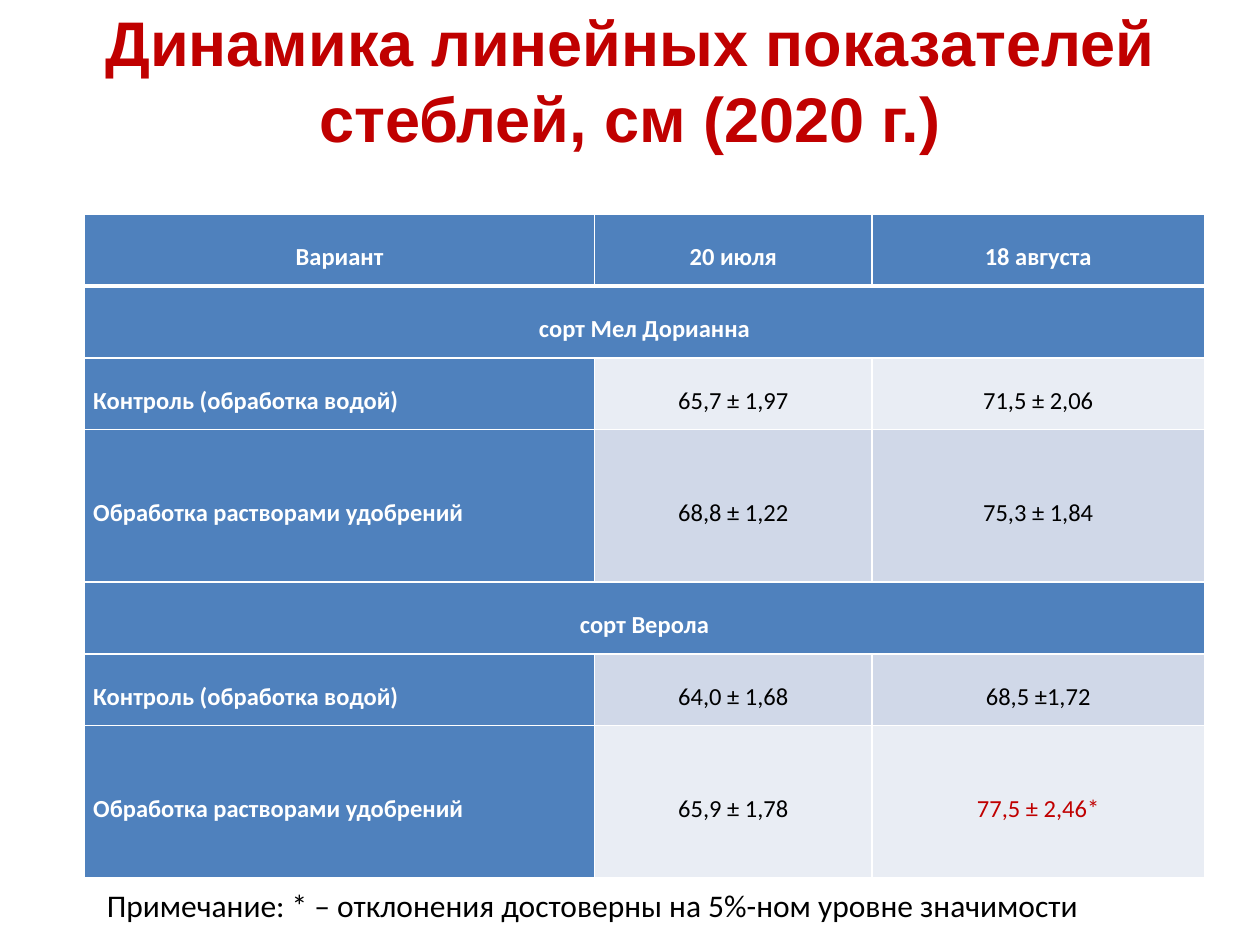
from lxml.etree import SubElement
from pptx import Presentation
from pptx.dml.color import RGBColor
from pptx.enum.text import MSO_ANCHOR, PP_ALIGN
from pptx.oxml.ns import qn
from pptx.util import Inches, Pt

COLORS = {"red": "C00000", "blue": "4F81BD", "light": "E9EDF4",
          "mid": "D0D8E8", "white": "FFFFFF", "black": "000000"}

TITLE = "Динамика линейных показателей стеблей, см (2020 г.)"
NOTE = "Примечание: * – отклонения достоверны на 5%-ном уровне значимости"
CONTROL = "Контроль (обработка водой)"
TREATED = "Обработка\N{NO-BREAK SPACE}растворами удобрений"
# A row with one text spans the whole table
ROWS = [
    ("Вариант", "20 июля", "18 августа"),
    ("сорт Мел Дорианна",),
    (CONTROL, "65,7 ± 1,97", "71,5 ± 2,06"),
    (TREATED, "68,8 ± 1,22", "75,3 ± 1,84"),
    ("сорт Верола",),
    (CONTROL, "64,0 ± 1,68", "68,5 ±1,72"),
    (TREATED, "65,9 ± 1,78", "77,5 ± 2,46*"),
]
BANDS = {2: "light", 3: "mid", 5: "mid", 6: "light"}
COL_WIDTHS = (4.05, 2.2, 2.64)
ROW_HEIGHT, TALL_ROW = 0.57, 1.21


def write(tf, text, size, color, font="Calibri", bold=False, align=PP_ALIGN.LEFT, spacing=None):
    p = tf.paragraphs[0]
    p.alignment = align
    if spacing:
        p.line_spacing = spacing
    r = p.add_run()
    r.text = text
    for name, value in {"size": Pt(size), "name": font, "bold": bold}.items():
        setattr(r.font, name, value)
    r.font.color.rgb = RGBColor.from_string(COLORS[color])


def set_borders(cell, bottom):
    tcPr = cell._tc.get_or_add_tcPr()
    widths = {"a:lnL": 1, "a:lnR": 1, "a:lnT": 1, "a:lnB": bottom}
    for i, (tag, width) in enumerate(widths.items()):
        ln = SubElement(tcPr, qn(tag), w=str(Pt(width)))
        fill = SubElement(ln, qn("a:solidFill"))
        SubElement(fill, qn("a:srgbClr"), val=COLORS["white"])
        tcPr.insert(i, ln)


def style_cell(cell, fill, bottom):
    cell.fill.solid()
    cell.fill.fore_color.rgb = RGBColor.from_string(COLORS[fill])
    cell.vertical_anchor = MSO_ANCHOR.MIDDLE
    margins = {"margin_left": 0.07, "margin_right": 0.07, "margin_top": 0, "margin_bottom": 0}
    for name, value in margins.items():
        setattr(cell, name, Inches(value))
    set_borders(cell, bottom)


def add_results_table(s):
    heights = [TALL_ROW if row[0] == TREATED else ROW_HEIGHT for row in ROWS]
    table = s.shapes.add_table(
        len(ROWS), len(COL_WIDTHS), Inches(0.67), Inches(1.7),
        Inches(sum(COL_WIDTHS)), Inches(sum(heights))).table
    for column, width in zip(table.columns, COL_WIDTHS):
        column.width = Inches(width)
    for i, (texts, height) in enumerate(zip(ROWS, heights)):
        table.rows[i].height = Inches(height)
        for j in range(len(COL_WIDTHS)):
            is_value = j > 0 and i in BANDS
            style_cell(table.cell(i, j), BANDS[i] if is_value else "blue", 3 if i == 0 else 1)
        if len(texts) == 1:
            table.cell(i, 0).merge(table.cell(i, len(COL_WIDTHS) - 1))
        for j, text in enumerate(texts):
            is_value = j > 0 and i in BANDS
            is_label = j == 0 and i in BANDS
            color = "white" if not is_value else "red" if text.endswith("*") else "black"
            write(table.cell(i, j).text_frame, text, 14, color, bold=not is_value, spacing=1.5,
                  align=PP_ALIGN.JUSTIFY if is_label else PP_ALIGN.CENTER)


prs = Presentation()
prs.slide_width, prs.slide_height = Inches(10), Inches(7.5)
s = prs.slides.add_slide(prs.slide_layouts[6])

tf = s.shapes.add_textbox(Inches(0.5), Inches(0.3), Inches(9), Inches(1.25)).text_frame
tf.word_wrap = True
tf.vertical_anchor = MSO_ANCHOR.MIDDLE
tf.margin_top, tf.margin_bottom = 0, Inches(0.6)
write(tf, TITLE, 36, "red", font="Arial", bold=True, align=PP_ALIGN.CENTER, spacing=Pt(43.5))

add_results_table(s)

tf = s.shapes.add_textbox(Inches(0.75), Inches(6.98), Inches(8), Inches(0.4)).text_frame
tf.word_wrap = False
write(tf, NOTE, 18, "black")

prs.save("out.pptx")
